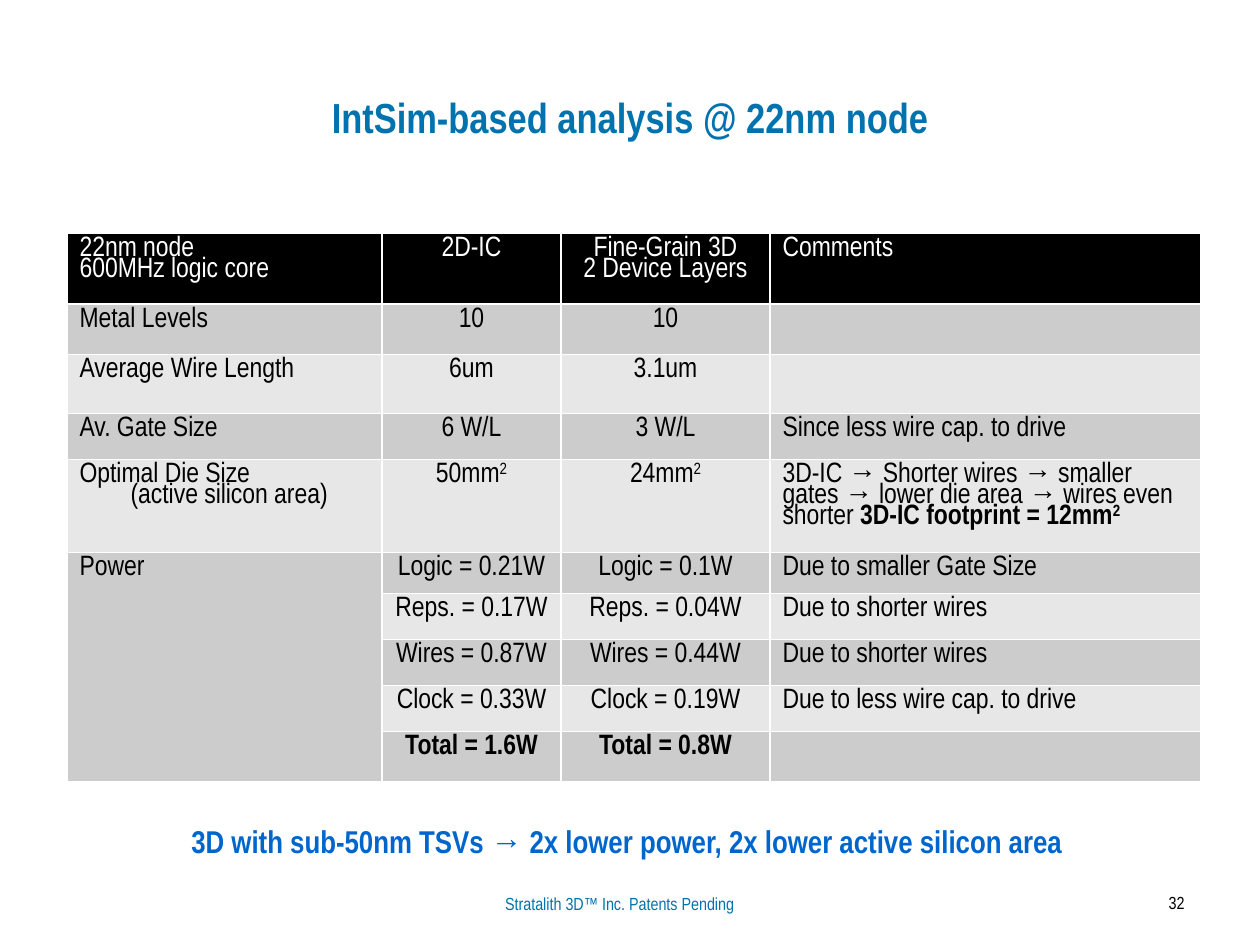
from lxml import etree
from pptx import Presentation
from pptx import util as u
from pptx.dml.color import RGBColor
from pptx.enum import text
from pptx.oxml.ns import qn

PX = 914400 / 126
FONT = "Arial Narrow"
TITLE_BLUE = RGBColor(0x00, 0x73, 0xAE)
CLAIM_BLUE = RGBColor(0x00, 0x66, 0xCC)
BLACK = RGBColor(0x00, 0x00, 0x00)
WHITE = RGBColor(0xFF, 0xFF, 0xFF)
DARK_BAND = RGBColor(0xCC, 0xCC, 0xCC)
LIGHT_BAND = RGBColor(0xE7, 0xE7, 0xE7)
LEFT, CENTER, RIGHT = text.PP_ALIGN.LEFT, text.PP_ALIGN.CENTER, text.PP_ALIGN.RIGHT

SQUARED = ("2", {"raised": True})
COLUMNS = [315, 179, 209, 431]
ROWS = [71, 46, 59, 46, 91, 41, 46, 46, 46, 46]
POWER_ROW = 5
# A cell is a list of paragraphs; a paragraph is a list of spans.
CELLS = [
    [[["22nm node"], ["600MHz logic core"]], [["2D-IC"]],
     [["Fine-Grain 3D"], ["2 Device Layers"]], [["Comments"]]],
    [[["Metal Levels"]], [["10"]], [["10"]], []],
    [[["Average Wire Length"]], [["6um"]], [["3.1um"]], []],
    [[["Av. Gate Size"]], [["6 W/L"]], [["3 W/L"]], [["Since less wire cap. to drive"]]],
    [[["Optimal Die Size"], ["(active silicon area)"]],
     [["50mm", SQUARED]], [["24mm", SQUARED]],
     [["3D-IC → Shorter wires → smaller gates → lower die area → wires even shorter ",
       ("3D-IC footprint = 12mm", {"bold": True}), ("2", {"bold": True, "raised": True})]]],
    [[["Power"]], [["Logic = 0.21W"]], [["Logic = 0.1W"]], [["Due to smaller Gate Size"]]],
    [[], [["Reps. = 0.17W"]], [["Reps. = 0.04W"]], [["Due to shorter wires"]]],
    [[], [["Wires = 0.87W"]], [["Wires = 0.44W"]], [["Due to shorter wires"]]],
    [[], [["Clock = 0.33W"]], [["Clock = 0.19W"]], [["Due to less wire cap. to drive"]]],
    [[], [[("Total = 1.6W", {"bold": True})]], [[("Total = 0.8W", {"bold": True})]], []],
]


def px(length):
    return u.Emu(round(length * PX))


def write(frame, paragraphs, size, color, bold=False, align=LEFT, spacing=1.0):
    """Fill a text frame; a span is a string or a (string, format) pair."""
    for index, spans in enumerate(paragraphs or [[]]):
        para = frame.add_paragraph() if index else frame.paragraphs[0]
        para.alignment = align
        para.line_spacing = spacing
        para.space_before = u.Pt(0)
        for item in spans:
            words, style = (item, {}) if isinstance(item, str) else item
            span = para.add_run()
            span.text = words
            span.font.name = FONT
            span.font.size = u.Pt(size)
            span.font.bold = style.get("bold", bold)
            span.font.color.rgb = color
            if style.get("raised"):
                span.font._element.set("baseline", "30000")


def set_borders(cell, color, width):
    properties = cell._tc.get_or_add_tcPr()
    for side in ("lnL", "lnR", "lnT", "lnB"):
        line = etree.SubElement(properties, qn(f"a:{side}"), w=str(u.Pt(width)))
        fill = etree.SubElement(line, qn("a:solidFill"))
        etree.SubElement(fill, qn("a:srgbClr"), val=str(color))


class SlideBuilder:
    def __init__(self, deck):
        self.page = deck.slides.add_slide(deck.slide_layouts[1])

    def placeholder(self, index, area, words, **style):
        box = self.page.placeholders[index]
        box.left, box.top, box.width, box.height = map(px, area)
        frame = box.text_frame
        frame.auto_size = text.MSO_AUTO_SIZE.NONE
        write(frame, [[words]], bold=True, align=CENTER, **style)
        return frame

    def plain_line(self, index, area, words, **style):
        """Placeholder line without bullet or hanging indent."""
        frame = self.placeholder(index, area, words, **style)
        properties = frame.paragraphs[0]._p.get_or_add_pPr()
        properties.set("marL", "0")
        properties.set("indent", "0")
        etree.SubElement(properties, qn("a:buNone"))

    def label(self, area, words, **style):
        box = self.page.shapes.add_textbox(*map(px, area))
        box.text_frame.word_wrap = True
        write(box.text_frame, [[words]], size=10, **style)

    def table(self, left, top):
        frame = self.page.shapes.add_table(
            len(ROWS), len(COLUMNS), px(left), px(top), px(sum(COLUMNS)), px(sum(ROWS)))
        table = frame.table
        table.first_row = table.horz_banding = False
        for column, width in zip(table.columns, COLUMNS):
            column.width = px(width)
        for r, (row, height, contents) in enumerate(zip(table.rows, ROWS, CELLS)):
            row.height = px(height)
            band = BLACK if r == 0 else DARK_BAND if r % 2 else LIGHT_BAND
            for c, paragraphs in enumerate(contents):
                cell = table.cell(r, c)
                write(cell.text_frame, paragraphs, 16, BLACK if r else WHITE,
                      align=CENTER if c in (1, 2) else LEFT, spacing=0.8)
                set_borders(cell, WHITE, 1)
                cell.fill.solid()
                cell.fill.fore_color.rgb = band
        table.cell(POWER_ROW, 0).merge(table.cell(len(ROWS) - 1, 0))
        return table


def main():
    deck = Presentation()
    deck.slide_width, deck.slide_height = px(1260), px(945)
    slide = SlideBuilder(deck)
    slide.placeholder(0, (63, 38, 1134, 158), "IntSim-based analysis @ 22nm node",
                      size=24, color=TITLE_BLUE)
    slide.plain_line(1, (60, 816, 1134, 66),
                     "3D with sub-50nm TSVs → 2x lower power, 2x lower active silicon area",
                     size=18, color=CLAIM_BLUE)
    slide.label((420, 887, 399, 33), "Stratalith 3D™ Inc. Patents Pending",
                color=TITLE_BLUE, align=CENTER)
    slide.label((1057, 886, 140, 42), "32", color=BLACK, align=RIGHT)
    table = slide.table(67, 233)
    area_note = table.cell(4, 0).text_frame.paragraphs[1]
    area_note._p.get_or_add_pPr().set("marL", str(px(51)))
    deck.save("out.pptx")


if __name__ == "__main__":
    main()
